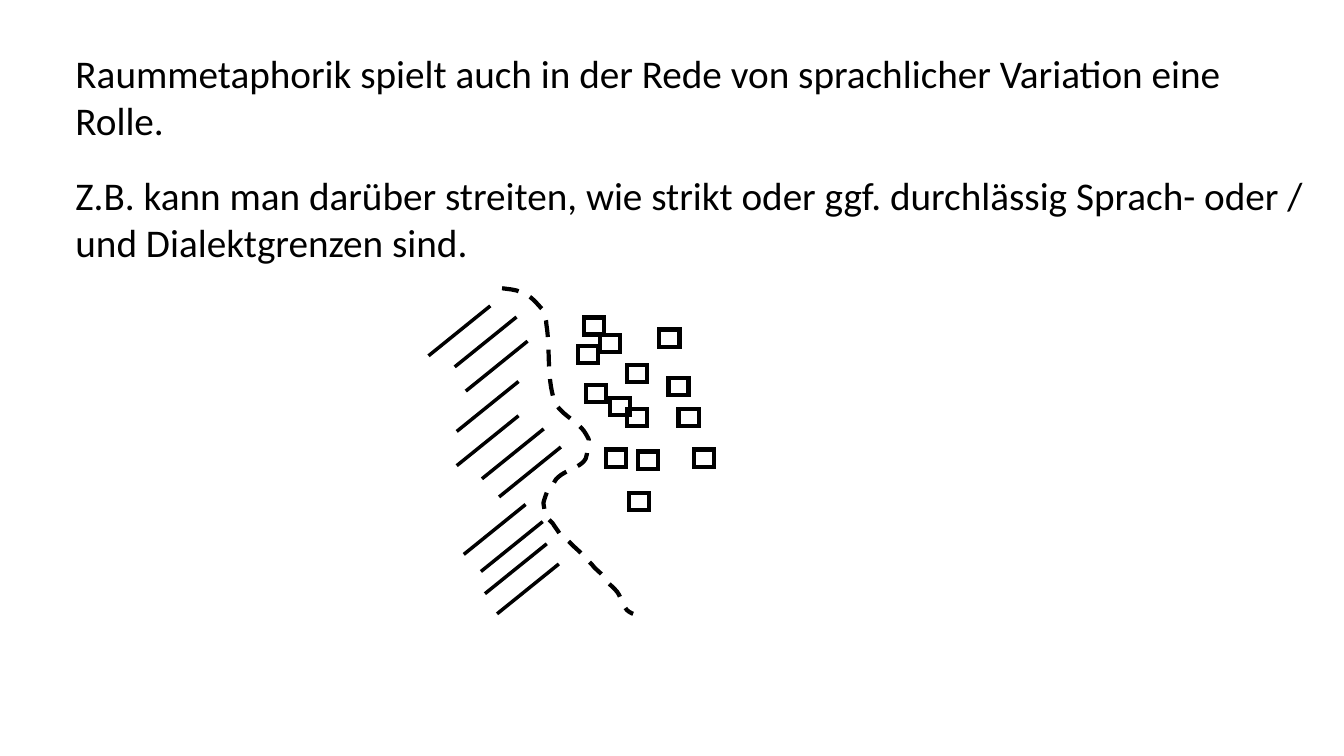
from lxml.etree import SubElement
from pptx import Presentation
from pptx.dml.color import RGBColor
from pptx.enum.dml import MSO_LINE_DASH_STYLE as Dash
from pptx.enum.shapes import MSO_CONNECTOR as Connector, MSO_SHAPE as Shape
from pptx.enum.text import MSO_AUTO_SIZE as AutoSize
from pptx.oxml.ns import qn
from pptx.util import Inches, Pt

COLORS = {"ink": "000000", "paper": "FFFFFF"}
FONT = "Calibri"
CELL = 0.1

STATEMENTS = [
    (4.4, 117.5, "Raummetaphorik spielt auch in der Rede von sprachlicher Variation eine Rolle."),
    (16.5, 124, "Z.B. kann man darüber streiten, wie strikt oder ggf. durchlässig "
                "Sprach- oder / und Dialektgrenzen sind."),
]

BORDER_START = (49.8, 28.6)
BORDER_CURVES = [
    [(50.4, 28.7), (51.1, 28.7), (51.7, 29.0)],
    [(52.8, 29.4), (53.2, 30.1), (53.9, 30.8)],
    [(54.0, 31.3), (54.2, 31.7), (54.2, 32.2)],
    [(54.6, 34.7), (54.2, 37.4), (55.0, 39.8)],
    [(55.4, 40.9), (56.9, 41.6), (57.7, 42.5)],
    [(58.0, 42.8), (58.2, 43.2), (58.4, 43.6)],
    [(58.3, 44.2), (58.3, 44.9), (58.1, 45.5)],
    [(57.7, 46.2), (56.9, 46.4), (56.2, 46.8)],
    [(55.8, 47.0), (55.5, 47.2), (55.2, 47.5)],
    [(55.1, 47.6), (55.0, 47.8), (54.9, 48.0)],
    [(54.7, 48.2), (54.5, 48.3), (54.4, 48.5)],
    [(54.2, 48.9), (54.0, 49.5), (53.9, 49.9)],
    [(54.0, 50.4), (54.0, 50.9), (54.2, 51.4)],
    [(54.3, 51.5), (54.6, 51.6), (54.7, 51.8)],
    [(54.8, 51.9), (54.9, 52.0), (55.0, 52.2)],
    [(56.3, 54.0), (54.4, 51.7), (56.9, 54.2)],
    [(57.6, 54.8), (58.1, 55.4), (58.7, 56.0)],
    [(59.0, 56.4), (59.4, 56.7), (59.7, 57.0)],
    [(59.9, 57.3), (60.2, 57.6), (60.4, 57.9)],
    [(60.7, 58.2), (61.0, 58.4), (61.2, 58.7)],
    [(61.5, 59.1), (61.5, 59.3), (61.7, 59.7)],
    [(61.8, 59.9), (62.1, 60.6), (62.4, 60.7)],
    [(62.5, 60.8), (62.8, 60.9), (62.8, 60.9)],
]

HATCH_RUN, HATCH_RISE = 6.13, 4.95
HATCH_BEHIND = [
    (42.5, 35.3), (45.1, 36.4), (46.2, 38.8), (45.3, 42.8),
    (45.3, 46.2), (47.8, 47.5), (46.0, 55.0),
]
HATCH_FRONT = [(49.5, 49.3), (48.1, 58.9), (47.7, 56.7), (49.3, 60.9)]

SPEAKER_SIZE = (2, 1.7)
SPEAKERS = [
    (57.9, 31.5), (57.3, 34.3), (58.1, 38.2), (62.4, 48.9), (60.5, 39.5),
    (62.2, 40.6), (60.1, 44.6), (63.3, 44.8), (66.3, 37.5), (62.2, 36.2),
    (59.5, 33.2), (67.3, 40.6), (65.4, 32.7), (68.8, 44.6),
]


def cells(*counts):
    return [Inches(n * CELL) for n in counts]


def bend_segments(sp):
    outline = next(sp._element.iter(qn("a:path")))
    segments = outline.findall(qn("a:lnTo"))
    for i in range(0, len(segments), 3):
        curve = SubElement(outline, qn("a:cubicBezTo"))
        for segment in segments[i:i + 3]:
            curve.append(segment[0])
            outline.remove(segment)


def add_run(p, text, size=28, color="ink", font=FONT):
    r = p.add_run()
    r.text = text
    r.font.size = Pt(size)
    r.font.name = font
    r.font.color.rgb = RGBColor.from_string(COLORS[color])
    return r


class SlideBuilder:
    def __init__(self, prs):
        self.s = prs.slides.add_slide(prs.slide_layouts[6])
        self.s.background.fill.solid()
        self.s.background.fill.fore_color.rgb = RGBColor.from_string(COLORS["paper"])

    def stroke(self, line, width):
        line.color.rgb = RGBColor.from_string(COLORS["ink"])
        line.width = Pt(width)

    def outline(self, sp, width=3):
        sp.shadow.inherit = False
        sp.fill.background()
        self.stroke(sp.line, width)

    def text(self, left, top, width, height, text):
        tf = self.s.shapes.add_textbox(*cells(left, top, width, height)).text_frame
        tf.word_wrap = True
        tf.auto_size = AutoSize.SHAPE_TO_FIT_TEXT
        add_run(tf.paragraphs[0], text)

    def border(self, start, curves):
        builder = self.s.shapes.build_freeform(*cells(*start))
        builder.add_line_segments([cells(*pt) for curve in curves for pt in curve], close=False)
        sp = builder.convert_to_shape()
        bend_segments(sp)
        self.outline(sp)
        sp.line.dash_style = Dash.DASH

    def hatch(self, starts):
        for x, y in starts:
            ends = cells(x, y, x + HATCH_RUN, y - HATCH_RISE)
            line = self.s.shapes.add_connector(Connector.STRAIGHT, *ends)
            self.stroke(line.line, 2.5)
            SubElement(line._element.spPr, qn("a:effectLst"))

    def speaker(self, x, y):
        sp = self.s.shapes.add_shape(Shape.RECTANGLE, *cells(x, y, *SPEAKER_SIZE))
        self.outline(sp)
        SubElement(sp._element.spPr.find(qn("a:ln")), qn("a:miter"), lim="800000")


def main():
    prs = Presentation()
    prs.slide_width, prs.slide_height = Inches(13.33), Inches(7.5)
    slide = SlideBuilder(prs)
    for top, width, text in STATEMENTS:
        slide.text(6.5, top, width, 10.4, text)
    slide.border(BORDER_START, BORDER_CURVES)
    slide.hatch(HATCH_BEHIND)
    for x, y in SPEAKERS:
        slide.speaker(x, y)
    slide.hatch(HATCH_FRONT)
    prs.save("out.pptx")


if __name__ == "__main__":
    main()
